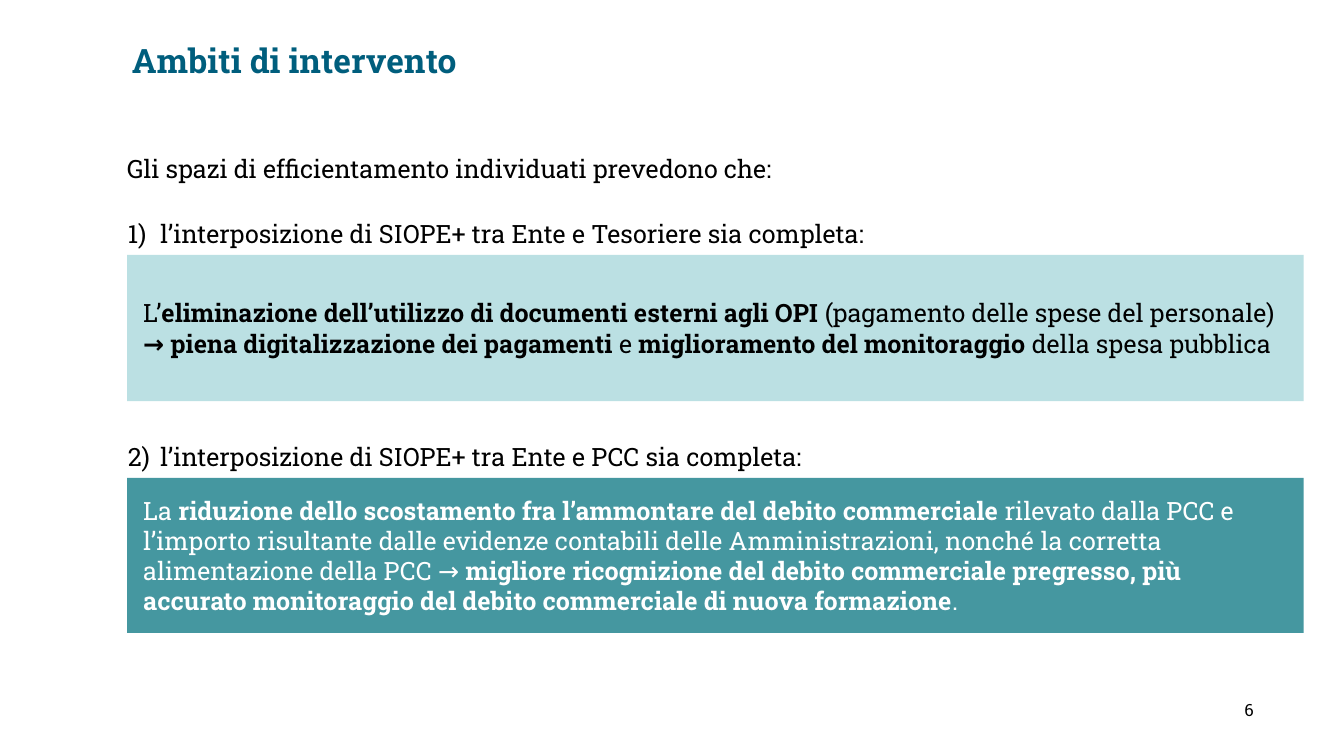
import pptx
import pptx.util
import pptx.dml.color
import pptx.enum.shapes
import pptx.enum.text

Inches = pptx.util.Inches
Align = pptx.enum.text.PP_ALIGN
Anchor = pptx.enum.text.MSO_ANCHOR

SLIDE_WIDTH, SLIDE_HEIGHT = Inches(13.33), Inches(7.5)
COLUMN, ROW = SLIDE_WIDTH / 100, SLIDE_HEIGHT / 100
FONT = "Roboto Slab"
COLORS = {
    "title": "005E7D",
    "text": "000000",
    "light text": "FFFFFF",
    "pale panel": "BBE0E3",
    "teal panel": "4597A0",
}
PANEL_LEFT, PANEL_WIDTH = 9.45, 87.55
HEADING_LEFT, HEADING_WIDTH, HEADING_HEIGHT = 8.78, 88.3, 6.67
HEADING_RISE = 5.47  # rows from the top of a heading to the top of its panel

INTRODUCTION = "Gli spazi di efficientamento individuati prevedono che:"
# Heading, panel text with ** around bold parts, panel top and height in rows, colours
SECTIONS = [
    (
        "1)\tl’interposizione di SIOPE+ tra Ente e Tesoriere sia completa:",
        "L’**eliminazione dell’utilizzo di documenti esterni agli OPI** (pagamento delle "
        "spese del personale) **→ piena digitalizzazione dei pagamenti** e "
        "**miglioramento del monitoraggio** della spesa pubblica",
        33.73, 19.33, "pale panel", "text",
    ),
    (
        "2)\tl’interposizione di SIOPE+ tra Ente e PCC sia completa:",
        "La **riduzione dello scostamento fra l’ammontare del debito commerciale** "
        "rilevato dalla PCC e l’importo risultante dalle evidenze contabili delle "
        "Amministrazioni, nonché la corretta alimentazione della PCC → **migliore "
        "ricognizione del debito commerciale pregresso, più accurato monitoraggio del "
        "debito commerciale di nuova formazione**.",
        63.2, 20.53, "teal panel", "light text",
    ),
]


def color(name):
    return pptx.dml.color.RGBColor.from_string(COLORS[name])


def grid_box(left, top, width, height):
    """Turn columns and rows into slide lengths."""
    return [round(n * unit) for n, unit in
            ((left, COLUMN), (top, ROW), (width, COLUMN), (height, ROW))]


def set_all(target, values):
    for name, value in values.items():
        setattr(target, name, value)


def write(shape, text, size=18, color_name="text", align=Align.LEFT, anchor=Anchor.TOP,
          margin=0.1, indent=0, hanging=0, bold=False):
    """Fill the shape with one paragraph; ** switches bold on and off."""
    frame = shape.text_frame
    set_all(frame, {
        "word_wrap": True,
        "vertical_anchor": anchor,
        "margin_left": Inches(margin),
        "margin_right": Inches(margin),
    })
    paragraph = frame.paragraphs[0]
    paragraph.alignment = align
    if indent:
        properties = paragraph._p.get_or_add_pPr()
        properties.set("marL", str(Inches(indent)))
        properties.set("indent", str(-Inches(hanging)))
    for index, part in enumerate(text.split("**")):
        run = paragraph.add_run()
        run.text = part
        set_all(run.font, {
            "name": FONT,
            "size": pptx.util.Pt(size),
            "bold": bold or index % 2 == 1,
        })
        run.font.color.rgb = color(color_name)


def add_text(slide, box, text, **formats):
    write(slide.shapes.add_textbox(*grid_box(*box)), text, **formats)


def add_panel(slide, box, text, fill, text_color):
    rectangle = pptx.enum.shapes.MSO_SHAPE.RECTANGLE
    panel = slide.shapes.add_shape(rectangle, *grid_box(*box))
    panel.shadow.inherit = False
    panel.fill.solid()
    panel.fill.fore_color.rgb = color(fill)
    panel.line.fill.background()
    write(panel, text, color_name=text_color, anchor=Anchor.MIDDLE, margin=0.16)


def add_section(slide, heading, text, top, height, fill, text_color):
    add_panel(slide, (PANEL_LEFT, top, PANEL_WIDTH, height), text, fill, text_color)
    add_text(slide, (HEADING_LEFT, top - HEADING_RISE, HEADING_WIDTH, HEADING_HEIGHT),
             heading, align=Align.JUSTIFY, indent=0.32, hanging=0.32)


def main():
    presentation = pptx.Presentation()
    set_all(presentation, {"slide_width": SLIDE_WIDTH, "slide_height": SLIDE_HEIGHT})
    slide = presentation.slides.add_slide(presentation.slide_layouts[6])
    add_text(slide, (6.08, 0.13, 66, 15.73), "Ambiti di intervento", size=24,
             color_name="title", anchor=Anchor.MIDDLE, indent=0.4, bold=True)
    add_text(slide, (8.7, 19.6, HEADING_WIDTH, 6.4), INTRODUCTION, align=Align.JUSTIFY)
    for section in SECTIONS:
        add_section(slide, *section)
    add_text(slide, (88.97, 91.87, 7.95, 6.67), "6", size=12, align=Align.CENTER)
    presentation.save("out.pptx")


if __name__ == "__main__":
    main()
